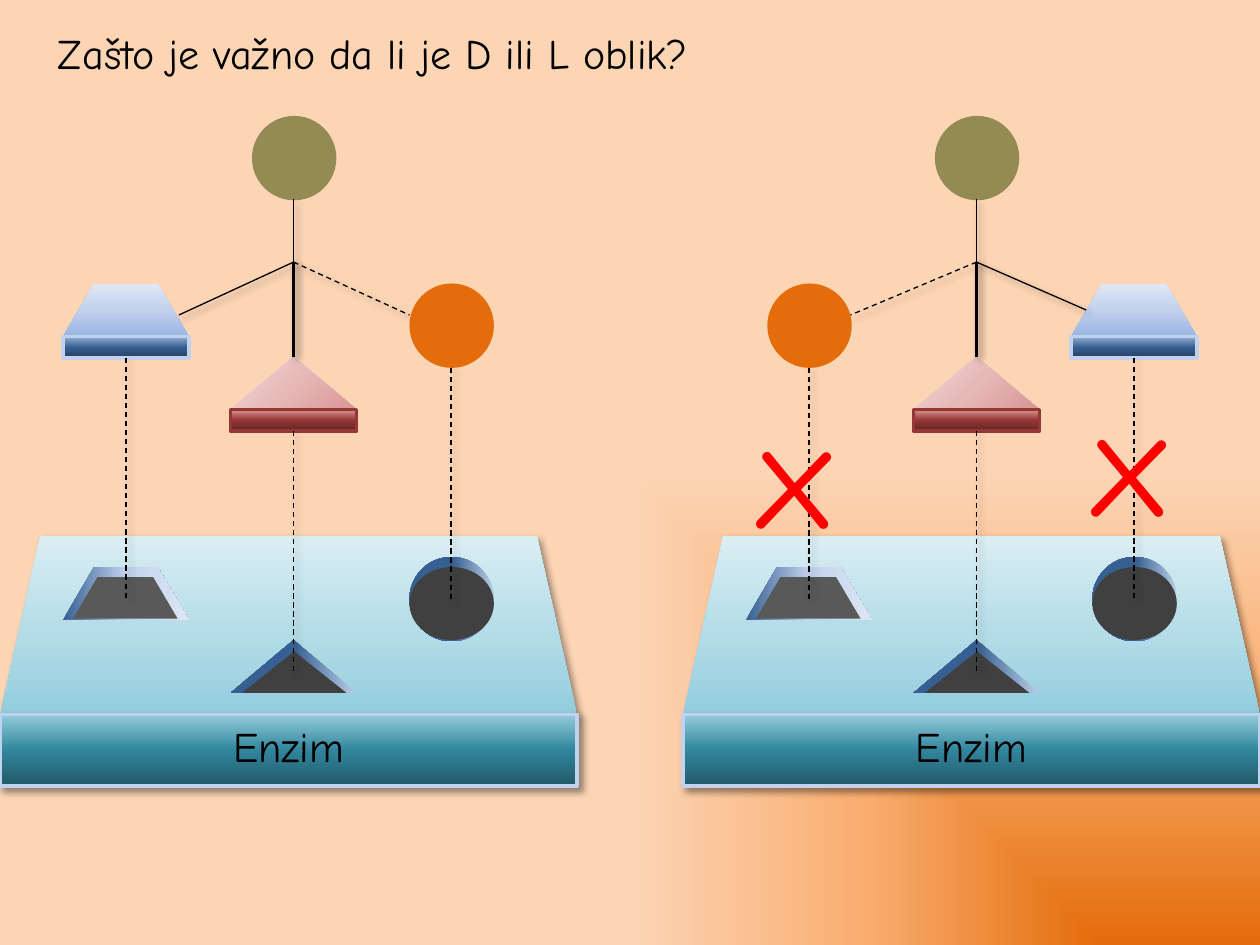
from dataclasses import dataclass

from lxml.etree import SubElement
from pptx import Presentation
from pptx.dml.color import RGBColor
from pptx.enum.dml import MSO_LINE
from pptx.enum.shapes import MSO_CONNECTOR, MSO_SHAPE as SHAPE
from pptx.enum.text import MSO_AUTO_SIZE, PP_ALIGN
from pptx.oxml import parse_xml
from pptx.oxml.ns import nsdecls, qn
from pptx.util import Inches, Pt


@dataclass(frozen=True)
class Theme:
    font: str = "Comic Neue"
    text_size: int = 24
    cross_size: int = 88
    ink: str = "000000"
    cross: str = "FF0000"
    olive: str = "948A54"
    orange: str = "E46C0A"
    floor: str = "595959"
    dark_floor: str = "404040"
    pale_edge: str = "C2D1ED"
    red_edge: str = "953735"
    thin: float = 0.75
    thick: float = 2
    backdrop: tuple = ((0, "E46C0A"), (50, "F9AD6F"), (100, "FCD5B5"))
    blue_top: tuple = (270, (0, "9AB5E4"), (50, "C2D1ED"), (100, "E1E8F5"))
    blue_bar: tuple = (270, (0, "254061"), (50, "376092"), (100, "95B3D7"))
    red_top: tuple = (45, (0, "F2DCDB"), (50, "E6B9B8"), (100, "D99694"))
    red_bar: tuple = (270, (0, "632523"), (50, "953735"), (100, "D99694"))
    enzyme_top: tuple = (270, (0, "93CDDD"), (50, "B7DEE8"), (100, "DBEEF4"))
    enzyme_front: tuple = (90, (0, "93CDDD"), (50, "31859C"), (100, "215968"))
    hole_wall: tuple = (180, (0, "95B3D7"), (0, "B9CDE5"), (50, "376092"))
    trapezoid_wall: tuple = (0, (0, "376092"), (50, "C2D1ED"), (100, "DCE6F2"))


THEME = Theme()
TITLE = "Zašto je važno da li je D ili L oblik?"
ENZYME = "Enzim"
CROSS = "x"
AXIS = 2.33
NEAR, FAR = 1, 3.58
MODELS = [
    {"left": 0, "blue": NEAR, "orange": FAR, "blue_bond": (1.42, 2.5), "orange_bond": 3.25},
    {"left": 5.42, "blue": FAR, "orange": NEAR, "blue_bond": (3.2, 2.46), "orange_bond": 1.33},
]
CROSSES = [(5.92, 2.92), (8.58, 2.83)]


def gradient(stops, direction):
    marks = "".join(
        f'<a:gs pos="{at * 1000}"><a:srgbClr val="{color}"/></a:gs>' for at, color in stops
    )
    return parse_xml(
        f'<a:gradFill {nsdecls("a")} rotWithShape="1">'
        f"<a:gsLst>{marks}</a:gsLst>{direction}</a:gradFill>"
    )


def cast_shadow(effects):
    shadow = SubElement(
        effects, qn("a:outerShdw"), blurRad=str(Pt(4)), dist=str(Pt(3)),
        dir="2700000", algn="tl", rotWithShape="0",
    )
    color = SubElement(shadow, qn("a:srgbClr"), val=THEME.ink)
    SubElement(color, qn("a:alpha"), val="40000")


def add_part(page, kind, x, y, width, height, fill, adjust=None, edge=None, shadow=False):
    part = page.shapes.add_shape(kind, Inches(x), Inches(y), Inches(width), Inches(height))
    part.shadow.inherit = False
    properties = part.element.spPr
    if adjust:
        part.adjustments[0] = adjust
    if isinstance(fill, str):
        part.fill.solid()
        part.fill.fore_color.rgb = RGBColor.from_string(fill)
    else:
        angle, *stops = fill
        geometry = properties.find(qn("a:prstGeom"))
        geometry.addnext(gradient(stops, f'<a:lin ang="{angle * 60000}" scaled="0"/>'))
    if edge:
        part.line.color.rgb = RGBColor.from_string(edge)
        part.line.width = Pt(THEME.thick)
    else:
        part.line.fill.background()
    if shadow:
        cast_shadow(properties.find(qn("a:effectLst")))
    return part


def add_bond(page, start, end, width=THEME.thin, dashed=False, bar=None):
    bond = page.shapes.add_connector(
        MSO_CONNECTOR.STRAIGHT, *(Inches(value) for value in (*start, *end))
    )
    if bar is not None:
        bond.begin_connect(bar, 2)
    bond.line.color.rgb = RGBColor.from_string(THEME.ink)
    bond.line.width = Pt(width)
    if dashed:
        bond.line.dash_style = MSO_LINE.DASH
    cast_shadow(SubElement(bond.element.spPr, qn("a:effectLst")))


def add_text(page, text, x, y, width, height, size=THEME.text_size, color=THEME.ink,
             align=PP_ALIGN.CENTER, wrap=True):
    box = page.shapes.add_textbox(Inches(x), Inches(y), Inches(width), Inches(height))
    frame = box.text_frame
    frame.word_wrap = wrap
    frame.auto_size = MSO_AUTO_SIZE.SHAPE_TO_FIT_TEXT
    para = frame.paragraphs[0]
    para.alignment = align
    span = para.add_run()
    span.text = text
    span.font.name = THEME.font
    span.font.size = Pt(size)
    span.font.color.rgb = RGBColor.from_string(color)


def add_substrate(page, center, top, adjust, top_fill, bar_fill, edge):
    left = center - 0.5
    add_part(page, SHAPE.TRAPEZOID, left, top, 1, 0.42, top_fill, adjust)
    return add_part(page, SHAPE.RECTANGLE, left, top + 0.42, 1, 0.17, bar_fill, edge=edge)


def add_molecule(page, axis, blue, orange, blue_bond, orange_bond):
    add_part(page, SHAPE.OVAL, axis - 0.33, 0.92, 0.67, 0.67, THEME.olive)
    blue_bar = add_substrate(page, blue, 2.25, 0.589, THEME.blue_top, THEME.blue_bar,
                             THEME.pale_edge)
    add_part(page, SHAPE.OVAL, orange - 0.33, 2.25, 0.67, 0.67, THEME.orange)
    red_bar = add_substrate(page, axis, 2.83, 1.2, THEME.red_top, THEME.red_bar,
                            THEME.red_edge)
    joint = (axis, 2.08)
    add_bond(page, (axis, 1.58), joint)
    add_bond(page, joint, blue_bond)
    add_bond(page, joint, orange_bond, dashed=True)
    add_bond(page, joint, (axis, 2.83), THEME.thick)
    return blue_bar, red_bar


def add_enzyme(page, left):
    axis, near, far = left + AXIS, left + NEAR, left + FAR
    add_part(page, SHAPE.TRAPEZOID, left, 4.25, 4.58, 1.42, THEME.enzyme_top, 0.226,
             shadow=True)
    add_part(page, SHAPE.RECTANGLE, left, 5.67, 4.58, 0.57, THEME.enzyme_front,
             edge=THEME.pale_edge, shadow=True)
    add_text(page, ENZYME, left + 1.5, 5.67, 1.58, 0.51)
    add_part(page, SHAPE.TRAPEZOID, axis - 0.5, 5.08, 1, 0.42, THEME.hole_wall, 1.2)
    add_part(page, SHAPE.OVAL, far - 0.33, 4.42, 0.67, 0.67, THEME.hole_wall)
    add_part(page, SHAPE.TRAPEZOID, near - 0.5, 4.5, 1, 0.42, THEME.trapezoid_wall, 0.589)
    add_part(page, SHAPE.TRAPEZOID, near - 0.42, 4.58, 0.83, 0.33, THEME.floor, 0.589)
    add_part(page, SHAPE.TRAPEZOID, axis - 0.41, 5.17, 0.83, 0.33, THEME.dark_floor, 1.5)
    add_part(page, SHAPE.OVAL, far - 0.33, 4.5, 0.67, 0.58, THEME.dark_floor)


def add_model(page, model):
    left = model["left"]
    axis, blue, orange = left + AXIS, left + model["blue"], left + model["orange"]
    bond_x, bond_y = model["blue_bond"]
    blue_bar, red_bar = add_molecule(
        page, axis, blue, orange, (left + bond_x, bond_y), (left + model["orange_bond"], 2.5)
    )
    add_enzyme(page, left)
    add_bond(page, (orange, 2.92), (orange, 4.75), dashed=True)
    add_bond(page, (axis, 3.42), (axis, 5.33), dashed=True, bar=red_bar)
    add_bond(page, (blue, 2.83), (blue, 4.75), dashed=True, bar=blue_bar)


def paint_background(page):
    page.background.fill.solid()
    solid = page.element.find(".//" + qn("p:bgPr")).find(qn("a:solidFill"))
    focus = '<a:path path="rect"><a:fillToRect l="100000" t="100000"/></a:path>'
    solid.getparent().replace(solid, gradient(THEME.backdrop, focus))


def main():
    deck = Presentation()
    deck.slide_width, deck.slide_height = Inches(10), Inches(7.5)
    page = deck.slides.add_slide(deck.slide_layouts[6])
    paint_background(page)
    add_text(page, TITLE, 0, 0.17, 5.92, 0.77)
    for model in MODELS:
        add_model(page, model)
    for x, y in CROSSES:
        add_text(page, CROSS, x, y, 0.93, 1.58, THEME.cross_size, THEME.cross,
                 PP_ALIGN.LEFT, wrap=False)
    deck.save("out.pptx")


if __name__ == "__main__":
    main()
